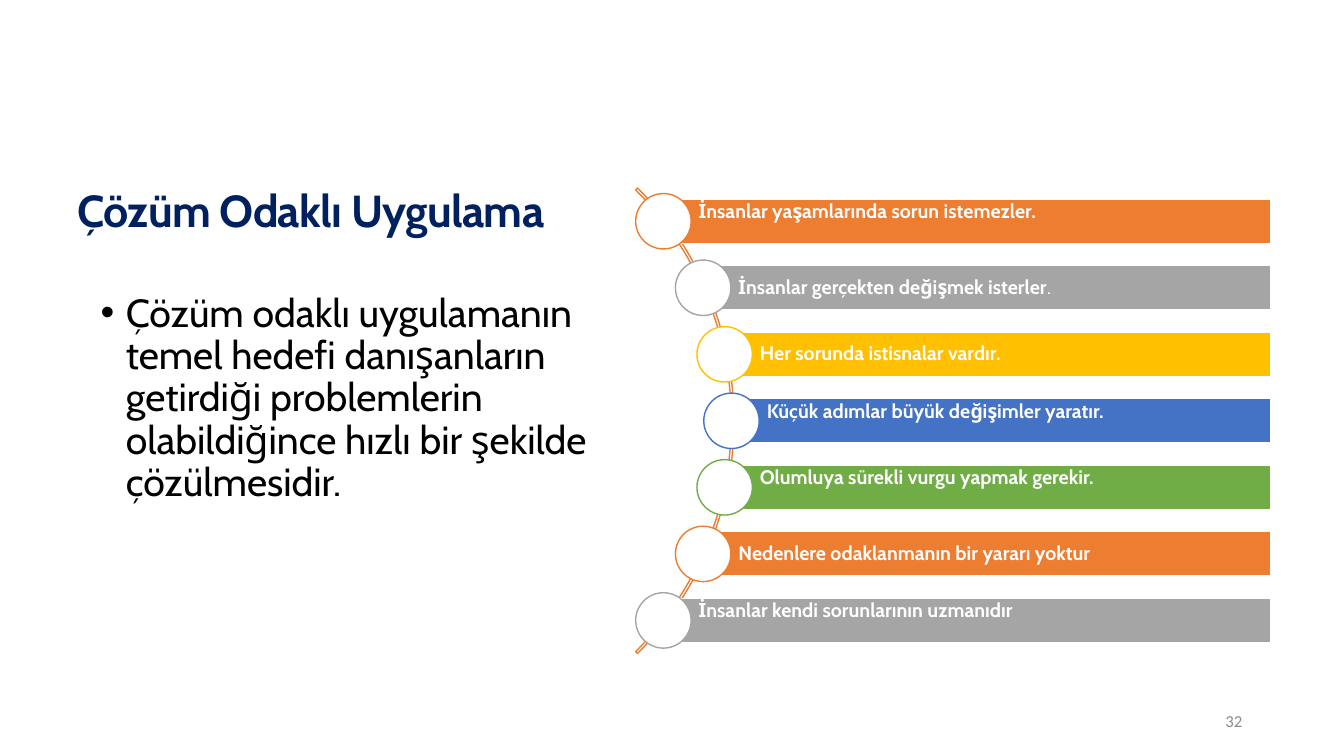
import math

import pptx
import pptx.dml.color
import pptx.enum.shapes
import pptx.enum.text
import pptx.oxml
import pptx.oxml.ns
import pptx.util

Inches = pptx.util.Inches
Pt = pptx.util.Pt
SHAPE = pptx.enum.shapes.MSO_SHAPE
ANCHOR = pptx.enum.text.MSO_ANCHOR
ALIGN = pptx.enum.text.PP_ALIGN

ORANGE, GRAY, GOLD, BLUE, GREEN = "ED7D31", "A5A5A5", "FFC000", "4472C4", "70AD47"
WHITE = "FFFFFF"

# Bar text, unbolded ending, colour, whether the text sits at the top of the bar
PRINCIPLES = [
    ("İnsanlar yaşamlarında sorun istemezler.", "", ORANGE, True),
    ("İnsanlar gerçekten değişmek isterler", ".", GRAY, False),
    ("Her sorunda istisnalar vardır.", "", GOLD, False),
    ("Küçük adımlar büyük değişimler yaratır.", "", BLUE, True),
    ("Olumluya sürekli vurgu yapmak gerekir.", "", GREEN, True),
    ("Nedenlere odaklanmanın bir yararı yoktur", "", ORANGE, False),
    ("İnsanlar kendi sorunlarının uzmanıdır", "", GRAY, True),
]


def rgb(color):
    return pptx.dml.color.RGBColor.from_string(color)


def set_font(font, name, size, color, bold=None):
    font.name = name
    font.size = Pt(size)
    font.color.rgb = rgb(color)
    font.bold = bold


def add_text(page, left, top, width, height, text, anchor):
    """Add a wrapping text box and return its only paragraph."""
    box = page.shapes.add_textbox(Inches(left), Inches(top), Inches(width), Inches(height))
    frame = box.text_frame
    frame.word_wrap = True
    frame.vertical_anchor = anchor
    para = frame.paragraphs[0]
    para.add_run().text = text
    return para


def add_outlined(page, kind, left, top, width, height, line, fill=None):
    shape = page.shapes.add_shape(
        kind, Inches(left), Inches(top), Inches(width), Inches(height))
    shape.shadow.inherit = False
    if fill:
        shape.fill.solid()
        shape.fill.fore_color.rgb = rgb(fill)
    else:
        shape.fill.background()
    shape.line.color.rgb = rgb(line)
    shape.line.width = Pt(1)
    return shape


def add_title(page, left, top, width, height):
    para = add_text(page, left, top, width, height, "Çözüm Odaklı Uygulama", ANCHOR.MIDDLE)
    para.line_spacing = 0.9
    para.runs[0]._r.get_or_add_rPr().set("spc", "-50")
    set_font(para.font, "Cabin", 32, "002060", True)


def add_body(page, left, top, width, height):
    para = add_text(
        page, left, top, width, height,
        "Çözüm odaklı uygulamanın temel hedefi danışanların getirdiği problemlerin "
        "olabildiğince hızlı bir şekilde çözülmesidir.", ANCHOR.TOP)
    para.line_spacing = 0.9
    settings = para._p.get_or_add_pPr()
    settings.set("marL", str(Inches(0.25)))
    settings.set("indent", str(Inches(-0.25)))
    namespace = pptx.oxml.ns.nsdecls("a")
    settings.append(pptx.oxml.parse_xml(f'<a:buFont {namespace} typeface="Arial"/>'))
    settings.append(pptx.oxml.parse_xml(f'<a:buChar {namespace} char="•"/>'))
    set_font(para.font, "Cabin", 28, "000000")


def add_bar(page, left, top, width, height, text, ending, color, at_top):
    bar = add_outlined(page, SHAPE.RECTANGLE, left, top, width, height, WHITE, color)
    frame = bar.text_frame
    frame.word_wrap = True
    frame.vertical_anchor = ANCHOR.TOP if at_top else ANCHOR.MIDDLE
    frame.margin_left = Inches(0.35)
    frame.margin_right = Inches(0.04)
    frame.margin_top = frame.margin_bottom = Inches(0 if at_top else 0.04)
    para = frame.paragraphs[0]
    para.alignment = ALIGN.LEFT
    para.line_spacing = 1.0 if at_top else 0.9
    para.add_run().text = text
    set_font(para.font, "Cabin", 14, WHITE, True)
    if ending:
        span = para.add_run()
        span.text = ending
        span.font.bold = False


def add_principles(page, left, top, size, right):
    """Draw the arc in a square box, with bars from the arc to the right edge."""
    arc = add_outlined(page, SHAPE.BLOCK_ARC, left, top, size, size, ORANGE)
    for index, value in enumerate((189, 27, 0.004)):
        arc.adjustments[index] = value

    center_x, center_y = left + size / 2, top + size / 2
    radius, step, bar_height, dot = 3.24, 0.66, 0.44, 0.55
    for index, (text, ending, color, at_top) in enumerate(PRINCIPLES):
        offset = (index - (len(PRINCIPLES) - 1) / 2) * step
        x = center_x + math.sqrt(radius ** 2 - offset ** 2)
        y = center_y + offset
        add_bar(page, x, y - bar_height / 2, right - x, bar_height,
                text, ending, color, at_top)
        add_outlined(page, SHAPE.OVAL, x - dot / 2, y - dot / 2, dot, dot, color, WHITE)


def add_page_number(page, left, top, width, height):
    para = add_text(page, left, top, width, height, "32", ANCHOR.MIDDLE)
    para.alignment = ALIGN.RIGHT
    set_font(para.font, "Calibri", 12, "8C8C8C")


def main():
    deck = pptx.Presentation()
    deck.slide_width = Inches(13.33)
    deck.slide_height = Inches(7.5)
    page = deck.slides.add_slide(deck.slide_layouts[6])
    add_title(page, 0.67, 1.57, 5.56, 1.09)
    add_body(page, 0.9, 2.86, 5.56, 3.77)
    add_principles(page, 0.75, 0.91, 6.53, 12.6)
    add_page_number(page, 9.42, 6.95, 3, 0.4)
    deck.save("out.pptx")


if __name__ == "__main__":
    main()
